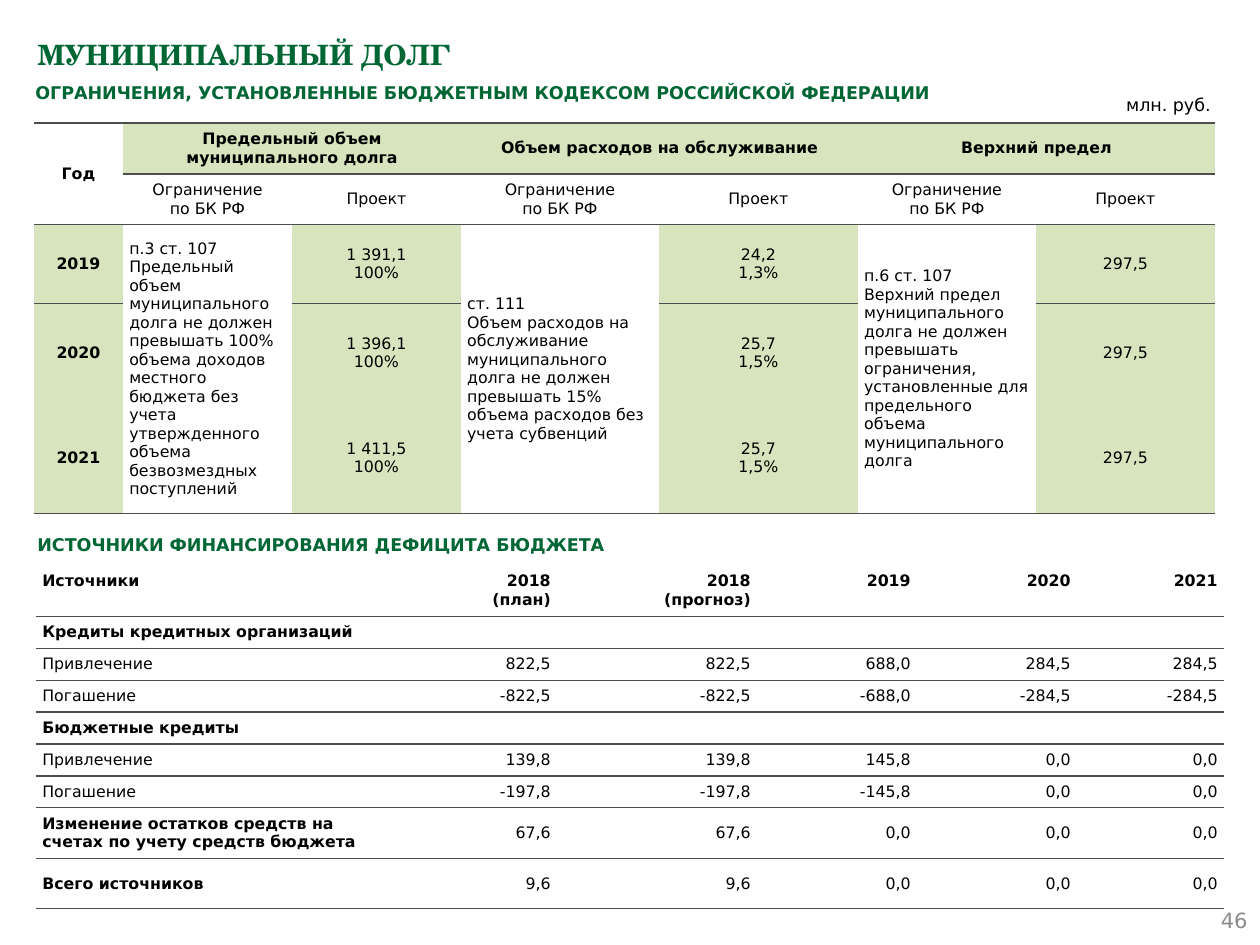
from lxml import etree
from pptx import Presentation
from pptx import util as u
from pptx.dml.color import RGBColor
from pptx.enum import shapes, text
from pptx.oxml.ns import qn

COLORS = {"heading": "006633", "body": "000000", "number": "8C8C8C",
          "rule": "4D4D4D", "band": "D7E4BD"}
PLAIN_TABLE_STYLE = "{2D5ABB26-0587-4C30-8999-92F81FD0307C}"
LEFT, CENTER, RIGHT = text.PP_ALIGN.LEFT, text.PP_ALIGN.CENTER, text.PP_ALIGN.RIGHT
TOP, MIDDLE = text.MSO_ANCHOR.TOP, text.MSO_ANCHOR.MIDDLE


def px(length):
    return u.Emu(round(length * 914400 / 126))


class SlideBuilder:
    title_font = "TeX Gyre Schola"
    body_font = "DejaVu Sans"

    def __init__(self, slide):
        self.slide = slide

    def format(self, frame, size, color="body", bold=False, align=LEFT,
               anchor=TOP, font=None, spacing=None):
        frame.word_wrap = True
        frame.vertical_anchor = anchor
        for paragraph in frame.paragraphs:
            paragraph.alignment = align
            paragraph.line_spacing = spacing
            paragraph.font.name = font or self.body_font
            paragraph.font.size = u.Pt(size)
            paragraph.font.bold = bold
            paragraph.font.color.rgb = RGBColor.from_string(COLORS[color])

    def title(self, words, left, top, width, height):
        shape = self.slide.shapes.title
        shape.left, shape.top, shape.width, shape.height = map(px, (left, top, width, height))
        shape.text_frame.text = words
        self.format(shape.text_frame, 16, "heading", True,
                    font=self.title_font, spacing=1.2)

    def text_box(self, words, left, top, width, height, size, color, **style):
        shape = self.slide.shapes.add_textbox(*map(px, (left, top, width, height)))
        shape.text_frame.text = words
        self.format(shape.text_frame, size, color, **style)

    def heading(self, words, left, top, width):
        self.text_box(words, left, top, width, 38, 10, "heading", bold=True, spacing=1.2)

    def label(self, words, left, top, width, height):
        shape = self.slide.shapes.add_shape(
            shapes.MSO_SHAPE.PENTAGON, *map(px, (left, top, width, height)))
        shape.adjustments[0] = 0
        shape.shadow.inherit = False
        shape.fill.background()
        shape.line.fill.background()
        shape.text_frame.text = words
        self.format(shape.text_frame, 10, align=RIGHT, anchor=MIDDLE)

    def table(self, rows, left, top, widths, heights, merges=()):
        frame = self.slide.shapes.add_table(
            len(heights), len(widths), px(left), px(top), px(sum(widths)), px(sum(heights)))
        table = frame.table
        table.first_row = table.horz_banding = False
        table._tbl.tblPr.find(qn("a:tableStyleId")).text = PLAIN_TABLE_STYLE
        for column, width in zip(table.columns, widths):
            column.width = px(width)
        for row, height in zip(table.rows, heights):
            row.height = px(height)
        for first_row, first_column, last_row, last_column in merges:
            table.cell(first_row, first_column).merge(table.cell(last_row, last_column))
        for r, row in enumerate(rows):
            for c, words in enumerate(row):
                table.cell(r, c).text_frame.text = words
        return table

    def cell(self, cell, bold=False, align=LEFT, anchor=MIDDLE, fill=None, rules=()):
        cell.margin_left = cell.margin_right = u.Inches(0.05)
        cell.margin_top = cell.margin_bottom = u.Inches(0.05)
        self.format(cell.text_frame, 9, bold=bold, align=align)
        cell.vertical_anchor = anchor
        if not cell.text_frame.text:  # keeps an empty row low
            end = etree.SubElement(cell.text_frame.paragraphs[0]._p, qn("a:endParaRPr"))
            end.set("sz", "900")
        if fill:
            cell.fill.solid()
            cell.fill.fore_color.rgb = RGBColor.from_string(COLORS[fill])
        else:
            cell.fill.background()
        properties = cell._tc.get_or_add_tcPr()
        for position, edge in enumerate(rules):
            line = etree.Element(qn("a:" + edge), w=str(u.Pt(1)))
            solid = etree.SubElement(line, qn("a:solidFill"))
            etree.SubElement(solid, qn("a:srgbClr"), val=COLORS["rule"])
            properties.insert(position, line)


LIMIT = "Ограничение\nпо БК РФ"
LIMIT_ROWS = [
    ["Год", "Предельный объем муниципального долга", "",
     "Объем расходов на обслуживание", "", "Верхний предел", ""],
    [""] + [LIMIT, "Проект"] * 3,
    ["2019",
     "п.3 ст. 107\nПредельный объем муниципального долга не должен превышать 100% "
     "объема доходов местного бюджета без учета утвержденного объема "
     "безвозмездных поступлений",
     "1 391,1\n100%",
     "ст. 111\nОбъем расходов на обслуживание муниципального долга не должен "
     "превышать 15% объема расходов без учета субвенций",
     "24,2\n1,3%",
     "п.6 ст. 107\nВерхний предел муниципального долга не должен превышать "
     "ограничения, установленные для предельного объема муниципального долга",
     "297,5"],
    ["2020", "", "1 396,1\n100%", "", "25,7\n1,5%", "", "297,5"],
    ["2021", "", "1 411,5\n100%", "", "25,7\n1,5%", "", "297,5"],
]
SOURCE_ROWS = [
    ["Источники", "2018\n(план)", "2018\n(прогноз)", "2019", "2020", "2021"],
    ["Кредиты кредитных организаций"] + [""] * 5,
    ["Привлечение", "822,5", "822,5", "688,0", "284,5", "284,5"],
    ["Погашение", "-822,5", "-822,5", "-688,0", "-284,5", "-284,5"],
    ["Бюджетные кредиты"] + [""] * 5,
    ["Привлечение", "139,8", "139,8", "145,8", "0,0", "0,0"],
    ["Погашение", "-197,8", "-197,8", "-145,8", "0,0", "0,0"],
    ["Изменение остатков средств на счетах по учету средств бюджета",
     "67,6", "67,6", "0,0", "0,0", "0,0"],
    ["Всего источников", "9,6", "9,6", "0,0", "0,0", "0,0"],
]


def add_sources_table(builder):
    table = builder.table(SOURCE_ROWS, 36, 566, [347, 174, 200, 160, 160, 147],
                          [50, 32, 32, 31, 32, 32, 31, 51, 50])
    for r, row in enumerate(SOURCE_ROWS):
        for c in range(len(row)):
            plain_name = row[0] in ("Привлечение", "Погашение")
            builder.cell(table.cell(r, c),
                         bold=r == 0 or (c == 0 and not plain_name),
                         align=RIGHT if c else LEFT,
                         anchor=MIDDLE if r else TOP,
                         rules=["lnT", "lnB"] if r else ["lnB"])


def add_limits_table(builder):
    merges = [(0, 0, 1, 0)]
    for c in (1, 3, 5):
        merges += [(0, c, 0, c + 1), (2, c, 4, c)]
    table = builder.table(LIMIT_ROWS, 34, 123, [89, 169, 169, 198, 199, 178, 179],
                          [51, 50, 79, 99, 111], merges)
    ruled_rows = (-1, 0, 1, 4)  # rows with a line below; -1 is the top edge
    for r, row in enumerate(LIMIT_ROWS):
        for c in range(len(row)):
            cell = table.cell(r, c)
            last_row = r + cell.span_height - 1 if cell.is_merge_origin else r
            rules = []
            if r - 1 in ruled_rows and (r, c) != (1, 0):
                rules.append("lnT")
            if last_row in ruled_rows and (r, c) != (1, 0):
                rules.append("lnB")
            banded = (r == 0 and c > 0) or (r > 1 and c % 2 == 0)
            builder.cell(cell, bold=r == 0 or c == 0,
                         align=LEFT if r > 1 and c % 2 else CENTER,
                         fill="band" if banded else None, rules=rules)


def main():
    presentation = Presentation()
    presentation.slide_width, presentation.slide_height = px(1260), px(945)
    builder = SlideBuilder(presentation.slides.add_slide(presentation.slide_layouts[5]))

    # Title and page number
    builder.title("МУНИЦИПАЛЬНЫЙ ДОЛГ", 25, 25, 1211, 100)
    builder.text_box("46", 966, 895, 294, 50, 12, "number", align=RIGHT, anchor=MIDDLE)

    # Sources of deficit financing
    builder.heading("ИСТОЧНИКИ ФИНАНСИРОВАНИЯ ДЕФИЦИТА БЮДЖЕТА", 25, 524, 814)
    add_sources_table(builder)

    # Limits set by the budget code
    add_limits_table(builder)
    builder.heading("ОГРАНИЧЕНИЯ, УСТАНОВЛЕННЫЕ БЮДЖЕТНЫМ КОДЕКСОМ РОССИЙСКОЙ ФЕДЕРАЦИИ",
                    23, 72, 944)
    builder.label("млн. руб.", 1067, 92, 156, 26)

    presentation.save("out.pptx")


if __name__ == "__main__":
    main()
